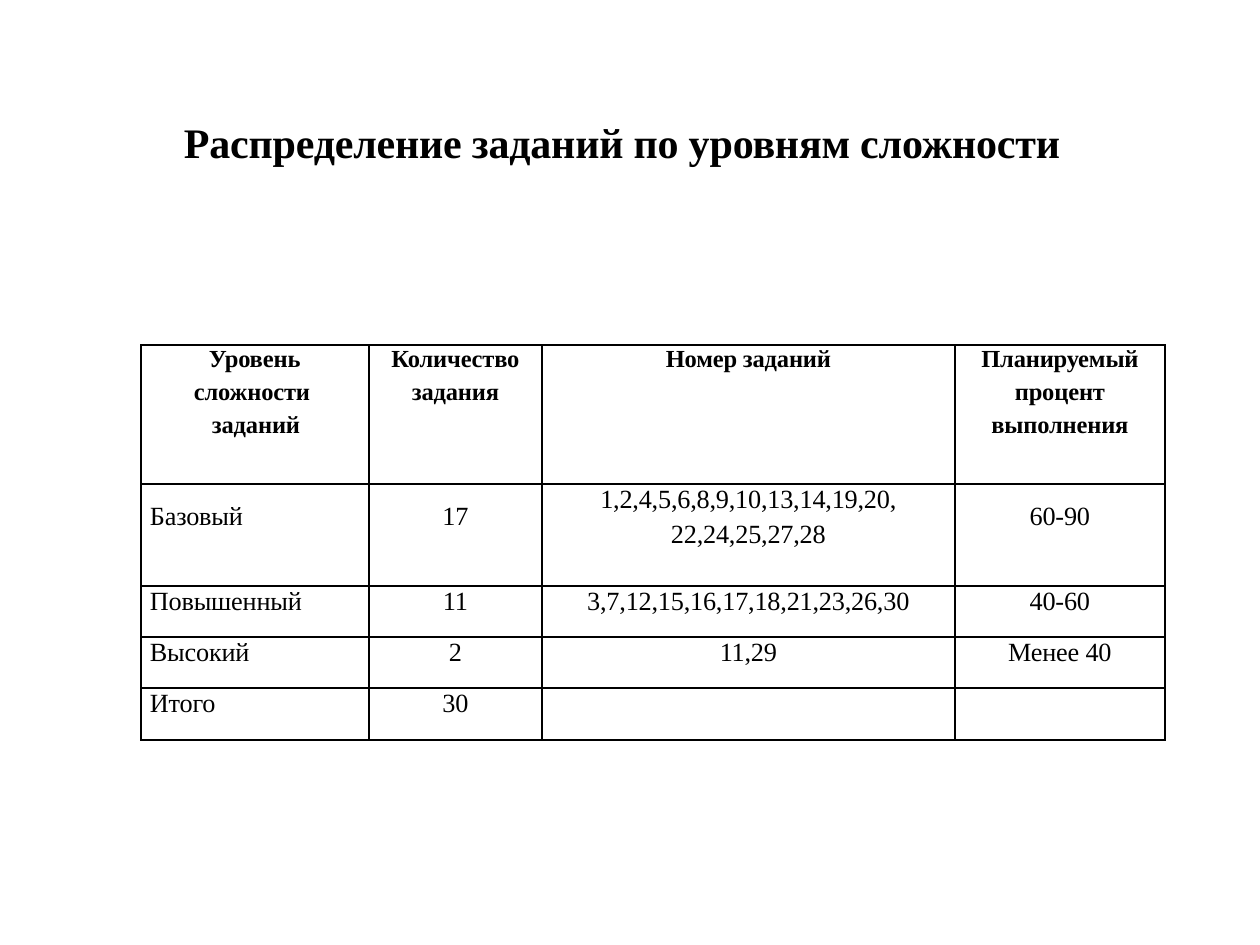
from dataclasses import dataclass

from pptx import Presentation
from pptx.dml.color import RGBColor
from pptx.enum.text import MSO_ANCHOR, MSO_AUTO_SIZE, PP_ALIGN
from pptx.oxml import parse_xml
from pptx.oxml.ns import nsdecls
from pptx.util import Emu, Pt

BLACK = RGBColor(0x00, 0x00, 0x00)
FONT = "Times New Roman"
EMU_PER_PX = 914400 / 126

COLUMN_WIDTHS = (228, 173, 413, 210)
ROW_HEIGHTS = (139, 102, 51, 51, 52)
HEADER_INDENTS = (68, 53, 71)
LABEL_INDENT = 9
TOP_MARGIN, LOWERED_MARGIN = 1, 18


@dataclass
class Level:
    name: str
    count: str
    tasks: str
    percent: str
    margin: int = TOP_MARGIN


HEADERS = (
    "Уровень\nсложности\nзаданий",
    "Количество\nзадания",
    "Номер заданий",
    "Планируемый\nпроцент\nвыполнения",
)
LEVELS = (
    Level("Базовый", "17", "1,2,4,5,6,8,9,10,13,14,19,20,\n22,24,25,27,28", "60-90", LOWERED_MARGIN),
    Level("Повышенный", "11", "3,7,12,15,16,17,18,21,23,26,30", "40-60"),
    Level("Высокий", "2", "11,29", "Менее 40"),
    Level("Итого", "30", "", ""),
)


def px(length: int) -> Emu:
    return Emu(round(length * EMU_PER_PX))


def format_span(span, size: int, bold: bool) -> None:
    span.font.name = FONT
    span.font.size = Pt(size)
    span.font.bold = bold
    span.font.color.rgb = BLACK
    span.font._element.set("spc", "-10")


def draw_borders(cell) -> None:
    properties = cell._tc.get_or_add_tcPr()
    for position, side in enumerate(("lnL", "lnR", "lnT", "lnB")):
        border = parse_xml(
            f'<a:{side} {nsdecls("a")} w="{Pt(1)}"><a:solidFill>'
            f'<a:srgbClr val="{BLACK}"/></a:solidFill></a:{side}>'
        )
        properties.insert(position, border)


def fill_cell(cell, text: str, size: int, bold: bool, top: int, gap: float,
              indents: tuple[int, ...] = ()) -> None:
    """Write a cell; lines are centred unless left indents are given."""
    cell.fill.background()
    cell.margin_left = cell.margin_right = cell.margin_bottom = 0
    cell.margin_top = px(top)
    cell.vertical_anchor = MSO_ANCHOR.TOP
    cell.text_frame.text = text
    for index, para in enumerate(cell.text_frame.paragraphs):
        if indents:
            para.alignment = PP_ALIGN.LEFT
            para._p.get_or_add_pPr().set("marL", str(px(indents[index])))
        else:
            para.alignment = PP_ALIGN.CENTER
        if index:
            para.space_before = Pt(gap)
        for span in para.runs:
            format_span(span, size, bold)
    draw_borders(cell)


def add_title(page, text: str) -> None:
    box = page.shapes.title
    box.left, box.top, box.width, box.height = px(184), px(116), px(1034), px(52)
    frame = box.text_frame
    frame.text = text
    frame.word_wrap = True
    frame.auto_size = MSO_AUTO_SIZE.NONE
    frame.vertical_anchor = MSO_ANCHOR.TOP
    frame.margin_left = frame.margin_right = frame.margin_bottom = 0
    frame.margin_top = px(TOP_MARGIN)
    para = frame.paragraphs[0]
    para.alignment = PP_ALIGN.LEFT
    format_span(para.runs[0], 24, True)


def add_level_table(page) -> None:
    table = page.shapes.add_table(
        len(ROW_HEIGHTS), len(COLUMN_WIDTHS), px(141), px(345),
        px(sum(COLUMN_WIDTHS)), px(sum(ROW_HEIGHTS)),
    ).table
    table.first_row = table.horz_banding = False
    for column, width in zip(table.columns, COLUMN_WIDTHS):
        column.width = px(width)
    for row, height in zip(table.rows, ROW_HEIGHTS):
        row.height = px(height)

    # Header row
    for index, header in enumerate(HEADERS):
        indents = () if index else HEADER_INDENTS
        fill_cell(table.cell(0, index), header, 14, True, TOP_MARGIN, 3.2, indents)

    # One row per level; the two-line task list stays at the top of its cell
    for row, level in enumerate(LEVELS, start=1):
        fill_cell(table.cell(row, 0), level.name, 15, False, level.margin, 0, (LABEL_INDENT,))
        fill_cell(table.cell(row, 1), level.count, 15, False, level.margin, 0)
        fill_cell(table.cell(row, 2), level.tasks, 15, False, TOP_MARGIN, 3.6)
        fill_cell(table.cell(row, 3), level.percent, 15, False, level.margin, 0)


def main() -> None:
    deck = Presentation()
    deck.slide_width, deck.slide_height = px(1260), px(945)
    page = deck.slides.add_slide(deck.slide_layouts[5])
    add_title(page, "Распределение заданий по уровням сложности")
    add_level_table(page)
    deck.save("out.pptx")


if __name__ == "__main__":
    main()
